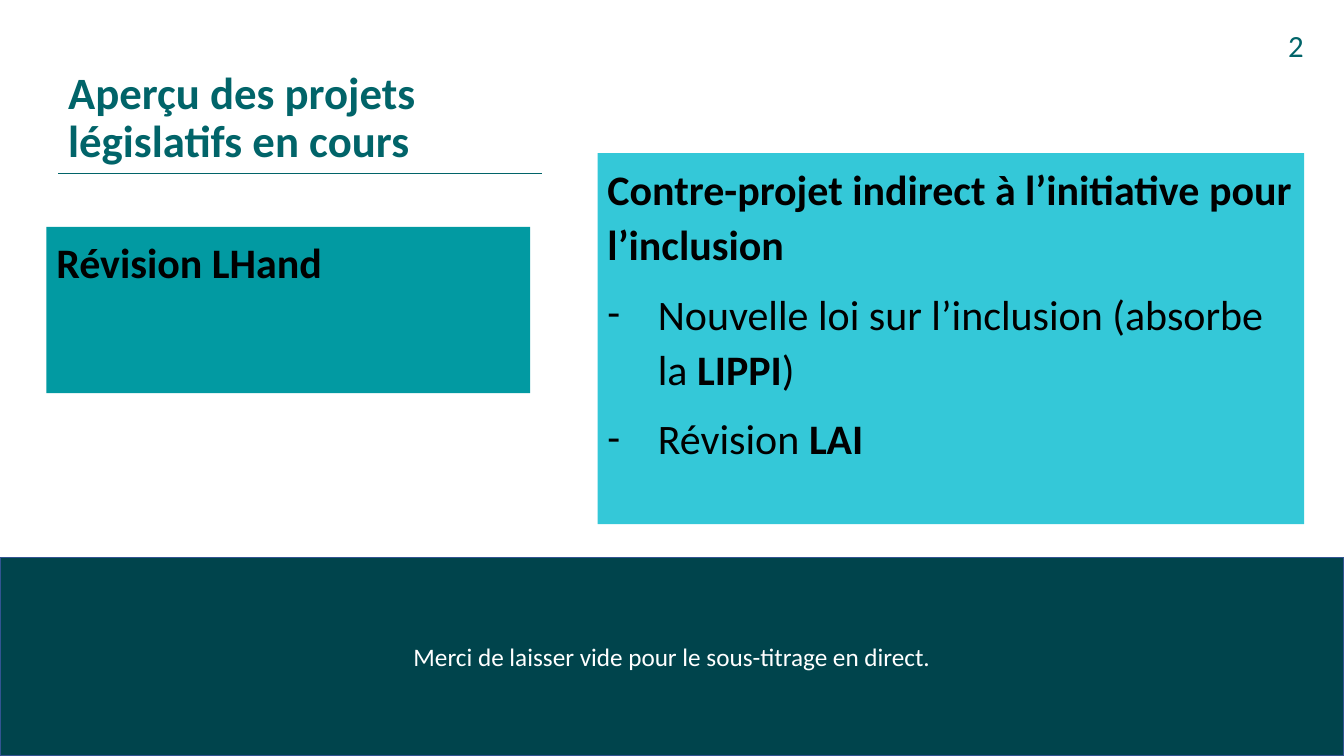
from lxml.etree import SubElement
from pptx import Presentation
from pptx.dml.color import RGBColor
from pptx.enum.shapes import MSO_CONNECTOR as Connector, MSO_SHAPE as Shape
from pptx.enum.text import MSO_ANCHOR as Anchor, PP_ALIGN as Align
from pptx.oxml.ns import qn
from pptx.util import Cm, Pt

COLORS = {
    "petrol": "016469",
    "dark": "00444C",
    "teal": "029AA2",
    "turquoise": "34C8D8",
    "outline": "325491",
    "black": "000000",
    "white": "FFFFFF",
}
WIDTH, HEIGHT = 33.87, 19.05
COLUMN_WIDTH = 12.19
TITLE_LEFT, TITLE_BOTTOM = 1.47, 4.37
BAND_TOP = 14.05


def color(name):
    return RGBColor.from_string(COLORS[name])


class SlideBuilder:
    font = "Calibri"
    bullet_indent = Cm(1.27)

    def __init__(self, presentation):
        self.slide = presentation.slides.add_slide(presentation.slide_layouts[6])

    def box(self, left, top, width, height, fill, outline=None):
        shape = self.slide.shapes.add_shape(
            Shape.RECTANGLE, Cm(left), Cm(top), Cm(width), Cm(height))
        shape.shadow.inherit = False
        shape.fill.solid()
        shape.fill.fore_color.rgb = color(fill)
        if outline:
            shape.line.color.rgb = color(outline)
            shape.line.width = Pt(1)
        else:
            shape.line.fill.background()
        return shape

    def text_box(self, left, top, width, height):
        return self.slide.shapes.add_textbox(Cm(left), Cm(top), Cm(width), Cm(height))

    def rule(self, left, top, width):
        line = self.slide.shapes.add_connector(
            Connector.STRAIGHT, Cm(left), Cm(top), Cm(left + width), Cm(top))
        line.line.color.rgb = color("petrol")
        line.line.width = Pt(1.2)
        SubElement(line._element.spPr, qn("a:effectLst"))

    def add_text(self, shape, paragraphs, size, ink, anchor=Anchor.TOP,
                 align=Align.LEFT, spacing=None, before=None):
        """Fill a shape with paragraphs given as (bulleted, [(text, bold), ...])."""
        frame = shape.text_frame
        frame.word_wrap = True
        frame.vertical_anchor = anchor
        for index, (bulleted, runs) in enumerate(paragraphs):
            paragraph = frame.add_paragraph() if index else frame.paragraphs[0]
            paragraph.alignment = align
            paragraph.line_spacing = spacing
            paragraph.space_before = before
            if bulleted:
                self.bullet(paragraph)
            for text, bold in runs:
                run = paragraph.add_run()
                run.text = text
                run.font.name = self.font
                run.font.size = Pt(size)
                run.font.bold = bold
                run.font.color.rgb = color(ink)

    def bullet(self, paragraph):
        properties = paragraph._p.get_or_add_pPr()
        properties.set("marL", str(self.bullet_indent))
        properties.set("indent", str(-self.bullet_indent))
        SubElement(properties, qn("a:buFont"), typeface=self.font)
        SubElement(properties, qn("a:buChar"), char="-")

    def project(self, left, top, width, height, fill, paragraphs):
        shape = self.box(left, top, width, height, fill)
        self.add_text(shape, paragraphs, 30, "black", spacing=1.1, before=Pt(10))


def main():
    presentation = Presentation()
    presentation.slide_width, presentation.slide_height = Cm(WIDTH), Cm(HEIGHT)
    builder = SlideBuilder(presentation)

    caption_band = builder.box(0, BAND_TOP, WIDTH, HEIGHT - BAND_TOP, "dark", "outline")
    builder.add_text(
        caption_band,
        [(False, [("Merci de laisser vide pour le sous-titrage en direct.", False)])],
        18, "white", Anchor.MIDDLE, Align.CENTER)

    builder.rule(TITLE_LEFT, TITLE_BOTTOM, COLUMN_WIDTH)
    title = builder.text_box(TITLE_LEFT, 0.53, COLUMN_WIDTH, 3.81)
    builder.add_text(
        title, [(False, [("Aperçu des projets législatifs en cours", True)])],
        32, "petrol", Anchor.BOTTOM, spacing=0.9)

    builder.project(15.06, 3.86, 17.81, 9.35, "turquoise", [
        (False, [("Contre-projet indirect à l’initiative pour l’inclusion", True)]),
        (True, [("Nouvelle loi sur l’inclusion (absorbe la ", False),
                ("LIPPI", True), (")", False)]),
        (True, [("Révision ", False), ("LAI", True)]),
    ])
    builder.project(1.17, 5.72, COLUMN_WIDTH, 4.19, "teal",
                    [(False, [("Révision LHand", True)])])

    page_number = builder.text_box(32.21, 0.56, 1.37, 2.62)
    builder.add_text(page_number, [(False, [("2", False)])], 22, "petrol")

    presentation.save("out.pptx")


if __name__ == "__main__":
    main()
